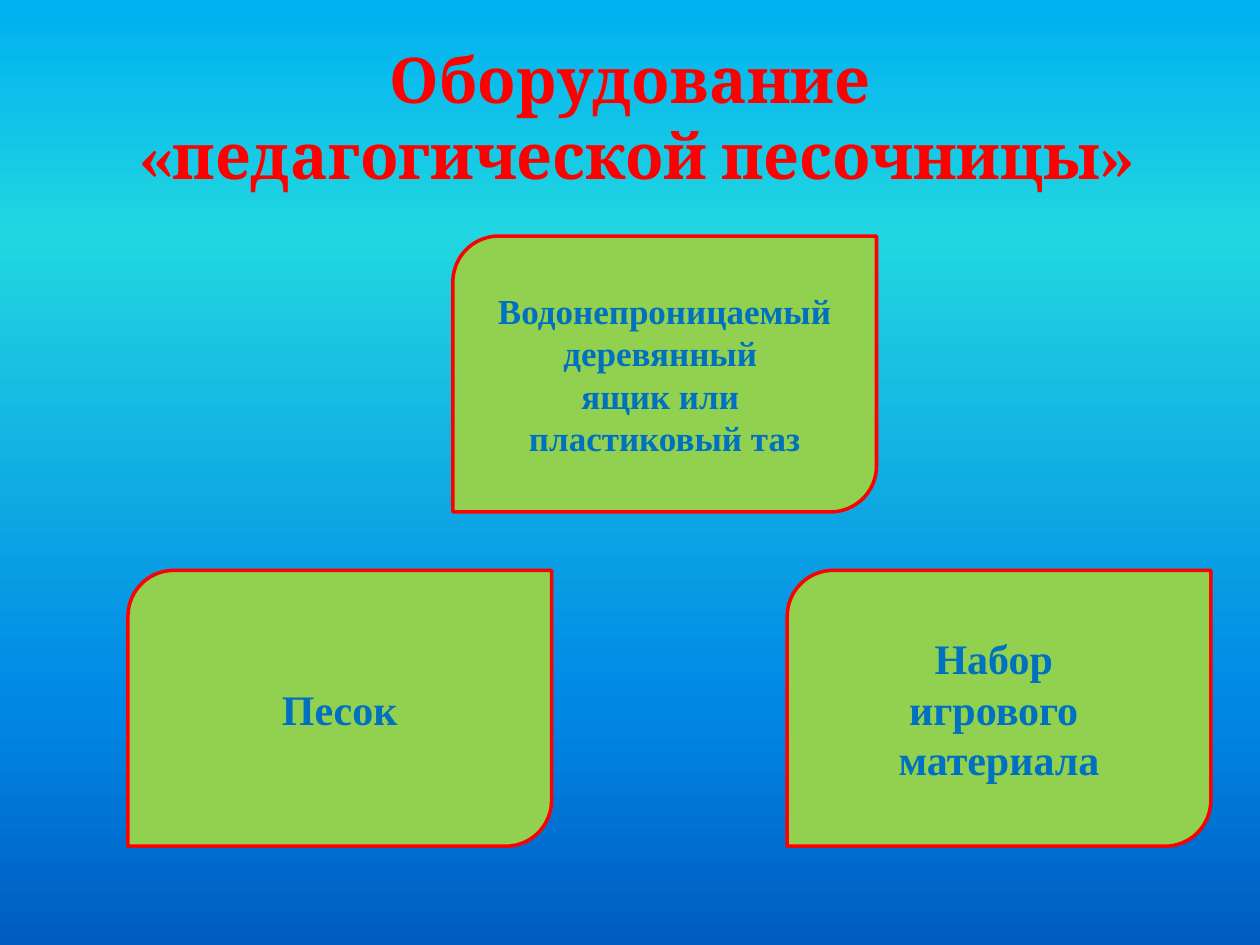
from copy import deepcopy

from pptx import Presentation
from pptx.dml.color import RGBColor
from pptx.enum.shapes import MSO_SHAPE
from pptx.enum.text import MSO_ANCHOR, PP_ALIGN
from pptx.oxml.ns import qn
from pptx.util import Cm, Pt

CARD_SHAPE = MSO_SHAPE.ROUND_2_DIAG_RECTANGLE
MIDDLE = MSO_ANCHOR.MIDDLE
CENTER = PP_ALIGN.CENTER

COLORS = {
    "sky": "00B0F0",
    "turquoise": "21D6E0",
    "azure": "0087E6",
    "deep": "005CBF",
    "red": "FF0000",
    "green": "92D050",
    "blue": "0070C0",
}
RGB = {name: RGBColor.from_string(code) for name, code in COLORS.items()}


def write_text(box, lines, *, font, size, color):
    """Fill a box with centred bold paragraphs; a \\v inside one breaks its line."""
    frame = box.text_frame
    frame.word_wrap = True
    frame.vertical_anchor = MIDDLE
    for index, line in enumerate(lines):
        para = frame.add_paragraph() if index else frame.paragraphs[0]
        para.text = line
        para.alignment = CENTER
        for span in para.runs:
            span.font.name = font
            span.font.size = Pt(size)
            span.font.bold = True
            span.font.color.rgb = RGB[color]


deck = Presentation()
deck.slide_width, deck.slide_height = Cm(25.4), Cm(19.05)
page = deck.slides.add_slide(deck.slide_layouts[6])

# Background: four-stop gradient from top to bottom
background = page.background.fill
background.gradient()
background.gradient_angle = 270
stop_list = page.element.find(".//" + qn("a:gsLst"))
for extra in [deepcopy(stop) for stop in stop_list]:
    stop_list.append(extra)
gradient = [(0, "sky"), (0.25, "turquoise"), (0.75, "azure"), (1, "deep")]
for stop, (position, color) in zip(background.gradient_stops, gradient):
    stop.position = position
    stop.color.rgb = RGB[color]

# Title
title = page.shapes.add_textbox(Cm(1.27), Cm(0.76), Cm(22.86), Cm(3.18))
write_text(title, ["Оборудование\v «педагогической песочницы»"],
           font="Cambria", size=36, color="red")

# Equipment cards
CARD_WIDTH, CARD_HEIGHT = Cm(8.54), Cm(5.56)
UPPER_TOP, LOWER_TOP = Cm(4.76), Cm(11.5)
cards = [
    (Cm(2.58), LOWER_TOP, 24, ["Песок"]),
    (Cm(9.13), UPPER_TOP, 20,
     ["Водонепроницаемый деревянный ", "ящик или ", "пластиковый таз"]),
    (Cm(15.87), LOWER_TOP, 24, ["Набор ", "игрового ", "материала"]),
]
for left, top, size, lines in cards:
    card = page.shapes.add_shape(CARD_SHAPE, left, top, CARD_WIDTH, CARD_HEIGHT)
    card.shadow.inherit = False
    card.fill.solid()
    card.fill.fore_color.rgb = RGB["green"]
    card.line.color.rgb = RGB["red"]
    card.line.width = Pt(2)
    write_text(card, lines, font="Times New Roman", size=size, color="blue")

deck.save("out.pptx")
